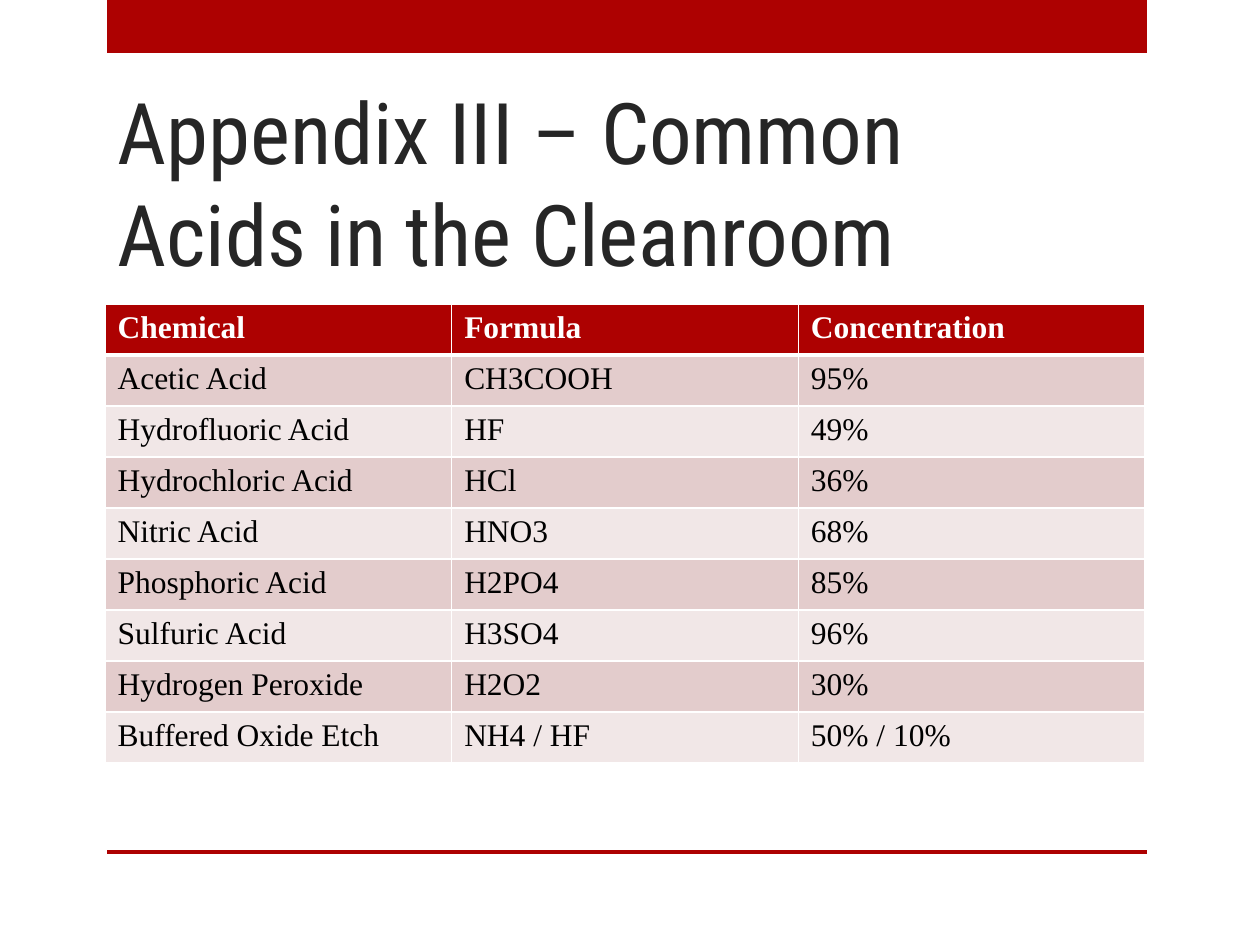
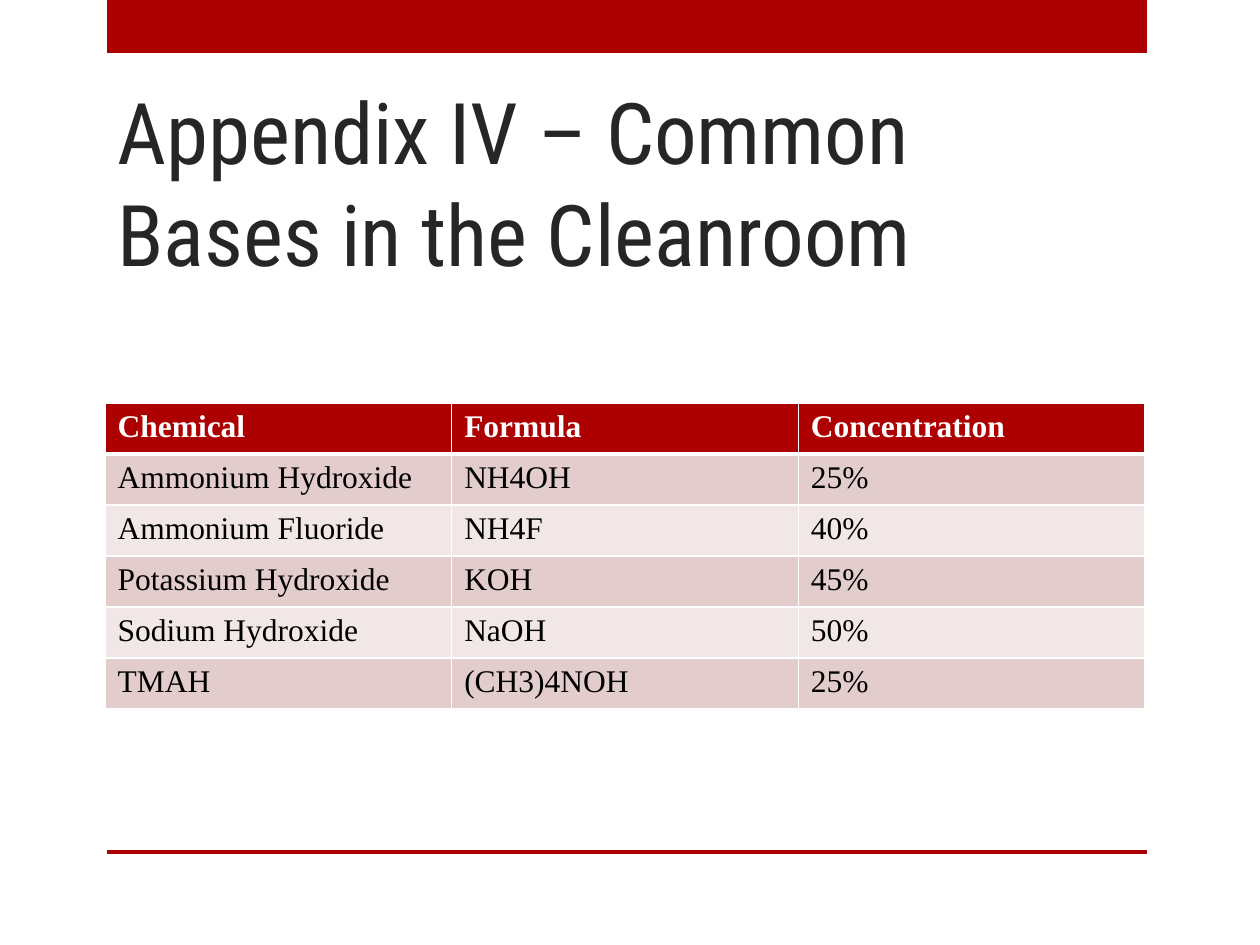
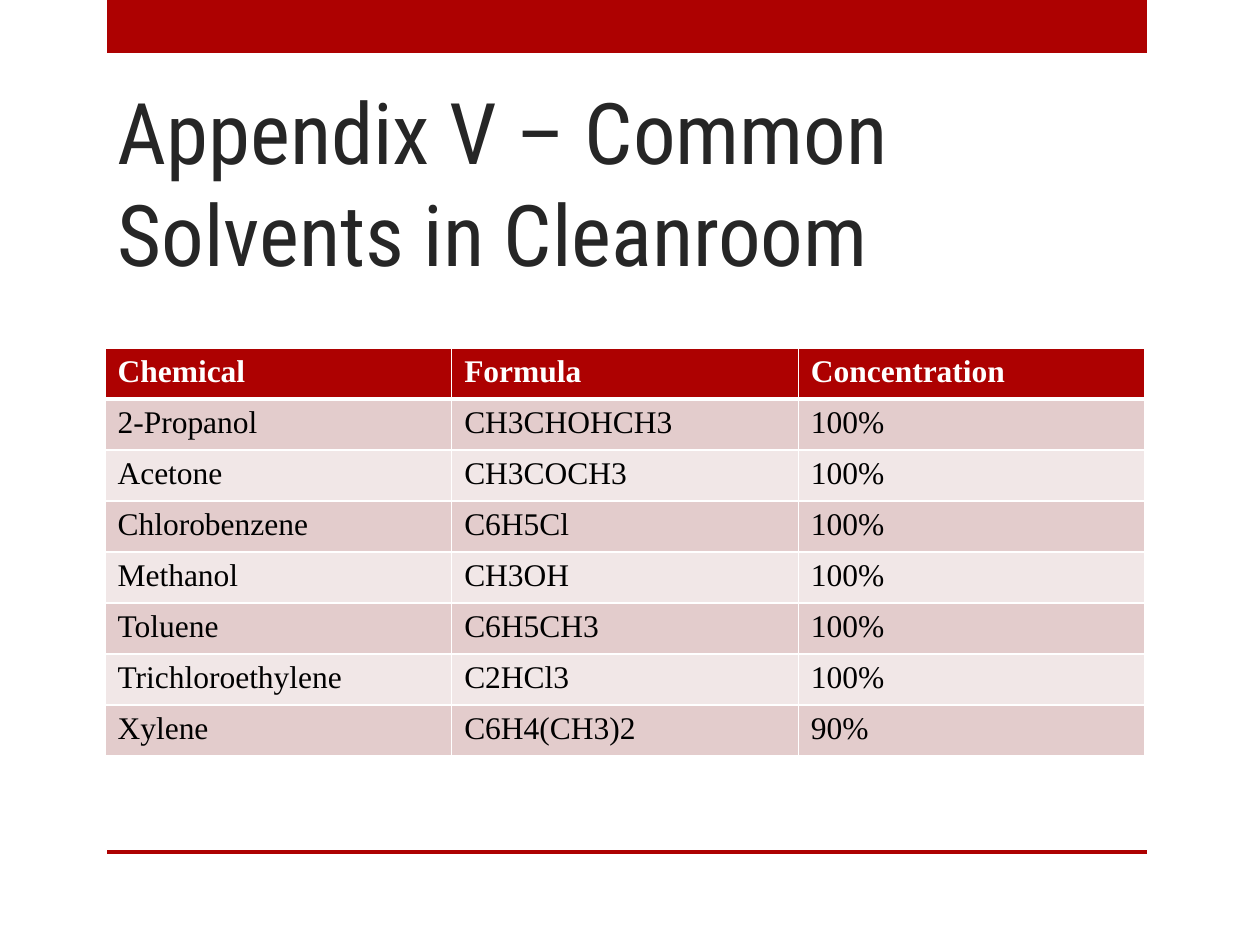
from lxml import etree
from pptx import Presentation
from pptx import util as u
from pptx.dml.color import RGBColor
from pptx.enum import shapes, text
from pptx.oxml import ns

PX = u.Inches(1) / 126

RED = RGBColor(0xAD, 0x01, 0x01)
CHARCOAL = RGBColor(0x26, 0x26, 0x26)
BLACK = RGBColor(0, 0, 0)
WHITE = RGBColor(0xFF, 0xFF, 0xFF)
ROSE = RGBColor(0xE3, 0xCC, 0xCC)
PALE_ROSE = RGBColor(0xF1, 0xE7, 0xE7)

TITLE_FONT = "Roboto Condensed"
TABLE_FONT = "Times New Roman"

HEADINGS = ("Chemical", "Formula", "Concentration")
ACIDS = [
    ("Acetic Acid", "CH3COOH", "95%"),
    ("Hydrofluoric Acid", "HF", "49%"),
    ("Hydrochloric Acid", "HCl", "36%"),
    ("Nitric Acid", "HNO3", "68%"),
    ("Phosphoric Acid", "H2PO4", "85%"),
    ("Sulfuric Acid", "H3SO4", "96%"),
    ("Hydrogen Peroxide", "H2O2", "30%"),
    ("Buffered Oxide Etch", "NH4 / HF", "50% / 10%"),
]
BASES = [
    ("Ammonium Hydroxide", "NH4OH", "25%"),
    ("Ammonium Fluoride", "NH4F", "40%"),
    ("Potassium Hydroxide", "KOH", "45%"),
    ("Sodium Hydroxide", "NaOH", "50%"),
    ("TMAH", "(CH3)4NOH", "25%"),
]
SOLVENTS = [
    ("2-Propanol", "CH3CHOHCH3", "100%"),
    ("Acetone", "CH3COCH3", "100%"),
    ("Chlorobenzene", "C6H5Cl", "100%"),
    ("Methanol", "CH3OH", "100%"),
    ("Toluene", "C6H5CH3", "100%"),
    ("Trichloroethylene", "C2HCl3", "100%"),
    ("Xylene", "C6H4(CH3)2", "90%"),
]
APPENDICES = [
    ("Appendix III – Common Acids in the Cleanroom", 304, ACIDS),
    ("Appendix IV – Common Bases in the Cleanroom", 403, BASES),
    ("Appendix V – Common Solvents in Cleanroom", 348, SOLVENTS),
]


def px(*lengths):
    return [u.Emu(round(length * PX)) for length in lengths]


def write(frame, words, *, font, size, color, bold=False):
    run = frame.paragraphs[0].add_run()
    run.text = words
    run.font.name = font
    run.font.size = u.Pt(size)
    run.font.color.rgb = color
    run.font.bold = bold


def set_borders(cell, **points):
    """Draw white cell borders, with widths in points keyed by L, R, T and B."""
    properties = cell._tc.get_or_add_tcPr()
    for side, width in points.items():
        line = etree.SubElement(properties, ns.qn(f"a:ln{side}"), w=str(u.Pt(width)))
        fill = etree.SubElement(line, ns.qn("a:solidFill"))
        etree.SubElement(fill, ns.qn("a:srgbClr"), val=str(WHITE))


class Deck:
    left, width = 105, 1040
    row_height = 51

    def __init__(self):
        self.presentation = Presentation()
        self.presentation.slide_width, self.presentation.slide_height = px(1260, 945)
        self.slide = None

    def new_slide(self):
        self.slide = self.presentation.slides.add_slide(self.presentation.slide_layouts[6])
        self.band(0, 53)
        self.band(850, 4)

    def band(self, top, height):
        bar = self.slide.shapes.add_shape(
            shapes.MSO_SHAPE.RECTANGLE, *px(self.left + 2, top, self.width, height))
        bar.shadow.inherit = False
        bar.fill.solid()
        bar.fill.fore_color.rgb = RED
        bar.line.fill.background()

    def title(self, words):
        frame = self.slide.shapes.add_textbox(*px(self.left, 69, 935, 221)).text_frame
        frame.word_wrap = True
        frame.vertical_anchor = text.MSO_ANCHOR.BOTTOM
        write(frame, words, font=TITLE_FONT, size=48.6, color=CHARCOAL)

    def table(self, top, chemicals):
        rows = [HEADINGS, *chemicals]
        grid = self.slide.shapes.add_table(
            len(rows), len(HEADINGS),
            *px(self.left, top, self.width, self.row_height * len(rows))).table
        grid.horz_banding = False
        for r, row in enumerate(rows):
            header = r == 0
            fill = RED if header else ROSE if r % 2 else PALE_ROSE
            for c, words in enumerate(row):
                cell = grid.cell(r, c)
                set_borders(cell, L=1, R=1, T=3 if r == 1 else 1, B=3 if header else 1)
                cell.fill.solid()
                cell.fill.fore_color.rgb = fill
                write(cell.text_frame, words, font=TABLE_FONT, size=18,
                      color=WHITE if header else BLACK, bold=header)


def main():
    deck = Deck()
    for title, table_top, chemicals in APPENDICES:
        deck.new_slide()
        deck.title(title)
        deck.table(table_top, chemicals)
    deck.presentation.save("out.pptx")


if __name__ == "__main__":
    main()
